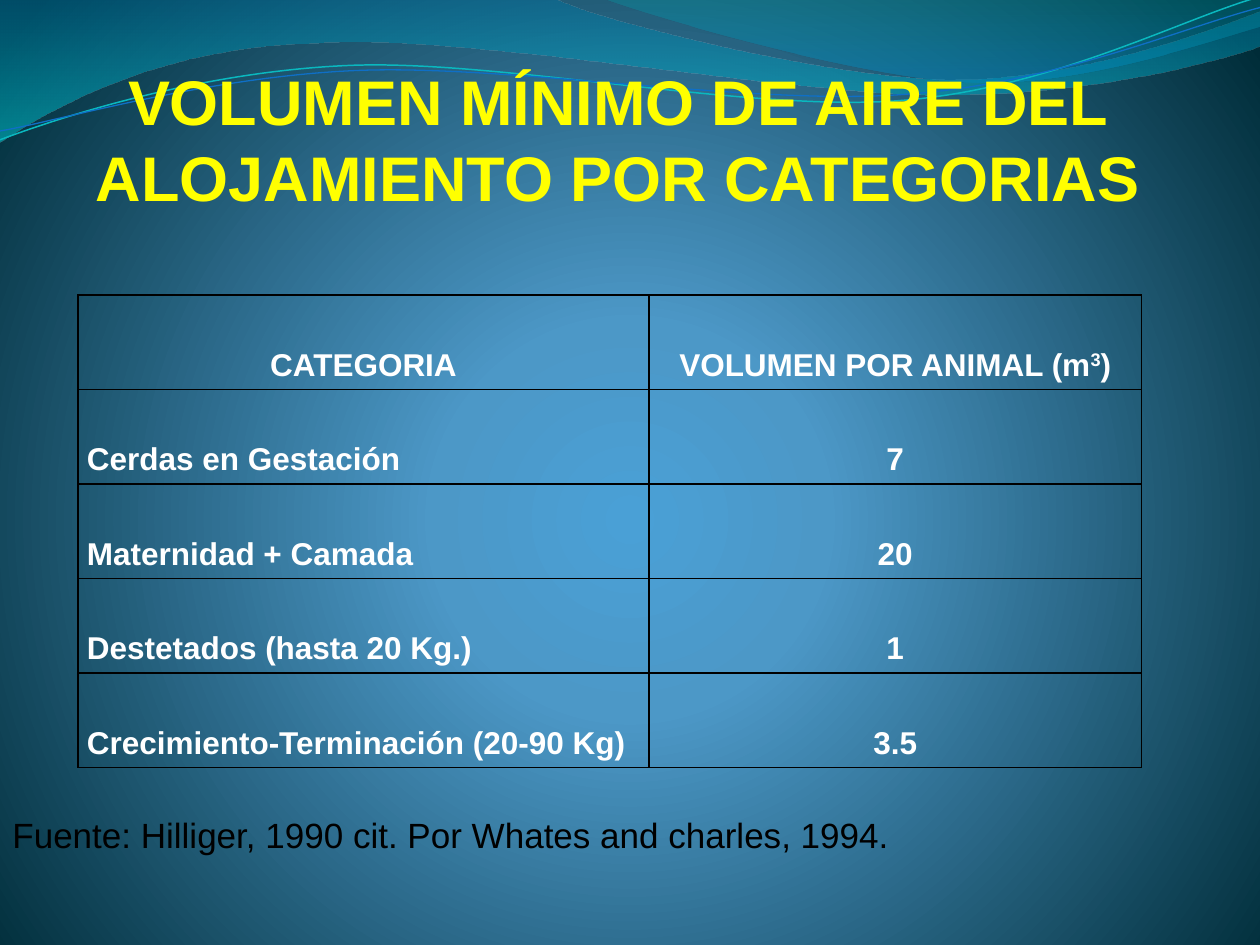
from lxml.etree import SubElement
from pptx import Presentation
from pptx.dml.color import RGBColor
from pptx.enum.text import MSO_ANCHOR as Anchor, PP_ALIGN as Align
from pptx.oxml.ns import qn
from pptx.util import Inches, Pt

TITLE_FORMAT = {"name": "Arial", "size": Pt(36), "bold": True, "color": "FFFF00"}
TABLE_FORMAT = {"name": "Arial", "size": Pt(18), "bold": True, "color": "FFFFFF"}
SOURCE_FORMAT = {"name": "Arial", "size": Pt(20), "color": "000000"}

# Each wave is a start point followed by segments: two numbers draw
# a straight line, six numbers draw a cubic curve.
LEFT_WAVE = [
    (0, 0), (4.4, -0.01),
    (4.76, 0.17, 6.64, 0.63, 7.58, 0.63), (8.53, 0.63, 9.58, 0.26, 10, 0.09),
    (10.01, 0.36),
    (9.83, 0.44, 8.7, 0.76, 7.46, 0.75), (6.22, 0.75, 3.82, 0.28, 2.57, 0.34),
    (1.29, 0.36, 0.46, 0.83, -0.01, 1.13), (0, 0),
]
RIGHT_WAVE = [
    (4.79, -0.01),
    (5.09, 0.11, 6.82, 0.62, 7.69, 0.65), (8.56, 0.69, 9.61, 0.32, 10, 0.21),
    (10, 0), (4.79, -0.01),
]
UPPER_LINE = [
    (0, 1.11),
    (0.48, 0.93, 1.58, 0.57, 2.77, 0.52), (3.95, 0.47, 5.93, 0.89, 7.13, 0.8),
    (8.33, 0.71, 9.38, 0.15, 9.98, -0.02),
]
LOWER_LINE = [
    (0, 1.04),
    (0.47, 0.96, 1.64, 0.61, 2.83, 0.56), (4.03, 0.51, 5.97, 0.84, 7.17, 0.75),
    (8.36, 0.67, 9.41, 0.21, 10, 0.06),
]


def color(hex_text):
    return RGBColor.from_string(hex_text)


def format_font(font, values):
    for name, value in values.items():
        if name == "color":
            font.color.rgb = color(value)
        else:
            setattr(font, name, value)


def set_gradient(fill, owner, stops):
    """Give fill the (position, colour, opacity) stops; return its element."""
    fill.gradient()
    gradient = owner.find(".//" + qn("a:gradFill"))
    for child in list(gradient):
        gradient.remove(child)
    stop_list = SubElement(gradient, qn("a:gsLst"))
    for position, hex_text, opacity in stops:
        stop = SubElement(stop_list, qn("a:gs"), pos=str(position * 1000))
        stop_color = SubElement(stop, qn("a:srgbClr"), val=hex_text)
        if opacity < 100:
            SubElement(stop_color, qn("a:alpha"), val=str(opacity * 1000))
    return gradient


def add_background(slide):
    stops = [(0, "4AA0D6", 100), (25, "4C98C7", 100), (100, "002C38", 100)]
    gradient = set_gradient(slide.background.fill, slide._element, stops)
    circle = SubElement(gradient, qn("a:path"), path="circle")
    SubElement(circle, qn("a:fillToRect"), l="10000", t="110000", r="10000", b="100000")


def add_outline(slide, outline, close):
    """Draw all points as lines, then join the three of each curve into one."""
    points = [
        (Inches(x), Inches(y))
        for segment in outline
        for x, y in zip(segment[::2], segment[1::2])
    ]
    builder = slide.shapes.build_freeform(*points[0])
    builder.add_line_segments(points[1:], close=close)
    shape = builder.convert_to_shape()
    lines = iter(list(shape._element.iter(qn("a:lnTo"))))
    for segment in outline[1:]:
        first = next(lines)
        if len(segment) == 6:
            first.tag = qn("a:cubicBezTo")
            for line in (next(lines), next(lines)):
                first.append(line[0])
                line.getparent().remove(line)
    shape.shadow.inherit = False
    return shape


def add_waves(slide):
    for outline, stops in (
        (LEFT_WAVE, [(0, "0074A1", 45), (100, "00C6CF", 55)]),
        (RIGHT_WAVE, [(0, "00A1A9", 30), (80, "008BBF", 45)]),
    ):
        shape = add_outline(slide, outline, True)
        gradient = set_gradient(shape.fill, shape._element, stops)
        SubElement(gradient, qn("a:lin"), ang="5400000", scaled="1")
        shape.line.fill.background()
    for outline, hex_text, width in (
        (UPPER_LINE, "0AB8BF", 0.85),
        (LOWER_LINE, "0F6FC6", 0.75),
    ):
        shape = add_outline(slide, outline, False)
        shape.fill.background()
        shape.line.color.rgb = color(hex_text)
        shape.line.width = Pt(width)


def add_text(slide, box, text, values, frame_values, align):
    frame = slide.shapes.add_textbox(*map(Inches, box)).text_frame
    for name, value in frame_values.items():
        setattr(frame, name, value)
    paragraph = frame.paragraphs[0]
    paragraph.alignment = align
    run = paragraph.add_run()
    run.text = text
    format_font(run.font, values)


def add_title(slide, box):
    frame_values = {
        "word_wrap": True, "vertical_anchor": Anchor.BOTTOM, "margin_left": 0,
        "margin_top": 0, "margin_right": Inches(0.02), "margin_bottom": 0,
    }
    text = "VOLUMEN MÍNIMO DE AIRE DEL ALOJAMIENTO POR CATEGORIAS"
    add_text(slide, box, text, TITLE_FORMAT, frame_values, Align.CENTER)


def add_source(slide, box):
    text = "Fuente: Hilliger, 1990 cit. Por Whates and charles, 1994."
    frame_values = {"word_wrap": False, "vertical_anchor": Anchor.TOP}
    add_text(slide, box, text, SOURCE_FORMAT, frame_values, Align.LEFT)


def set_borders(cell):
    properties = cell._tc.get_or_add_tcPr()
    for index, side in enumerate(("a:lnL", "a:lnR", "a:lnT", "a:lnB")):
        line = SubElement(properties, qn(side), w=str(Pt(1)))
        fill = SubElement(line, qn("a:solidFill"))
        SubElement(fill, qn("a:srgbClr"), val="000000")
        properties.insert(index, line)


def fill_cell(cell, parts, align):
    """Write the parts in turn, every second one as a superscript."""
    cell.margin_left = cell.margin_right = Inches(0.07)
    cell.margin_top = cell.margin_bottom = 0
    cell.fill.background()
    set_borders(cell)
    paragraph = cell.text_frame.paragraphs[0]
    paragraph.alignment = align
    paragraph.line_spacing = 2.5
    for index, part in enumerate(parts):
        run = paragraph.add_run()
        run.text = part
        format_font(run.font, TABLE_FORMAT)
        if index % 2:
            run._r.get_or_add_rPr().set("baseline", "30000")


def add_volume_table(slide, box):
    rows = [
        (["CATEGORIA"], ["VOLUMEN POR ANIMAL (m", "3", ")"]),
        (["Cerdas en Gestación"], ["7"]),
        (["Maternidad + Camada"], ["20"]),
        (["Destetados (hasta 20 Kg.)"], ["1"]),
        (["Crecimiento-Terminación (20-90 Kg)"], ["3.5"]),
    ]
    table_frame = slide.shapes.add_table(len(rows), 2, *map(Inches, box))
    table = table_frame.table
    table.first_row = table.horz_banding = False
    for column, width in zip(table.columns, (4.53, 3.91)):
        column.width = Inches(width)
    for row_index, row in enumerate(rows):
        table.rows[row_index].height = Inches(0.75 if row is rows[-1] else 0.58)
        for column_index, parts in enumerate(row):
            is_label = row_index > 0 and column_index == 0
            align = Align.JUSTIFY if is_label else Align.CENTER
            fill_cell(table.cell(row_index, column_index), parts, align)
    # Row heights reset the frame, which must leave room for the wide spacing.
    table_frame.height = Inches(box[3])


def main():
    presentation = Presentation()
    presentation.slide_width, presentation.slide_height = Inches(10), Inches(7.5)
    slide = presentation.slides.add_slide(presentation.slide_layouts[6])
    add_background(slide)
    add_waves(slide)
    add_title(slide, (0.62, 0.47, 8.59, 1.23))
    add_volume_table(slide, (0.62, 2.34, 8.44, 3.75))
    add_source(slide, (0, 6.41, 7.21, 0.77))
    presentation.save("out.pptx")


if __name__ == "__main__":
    main()
